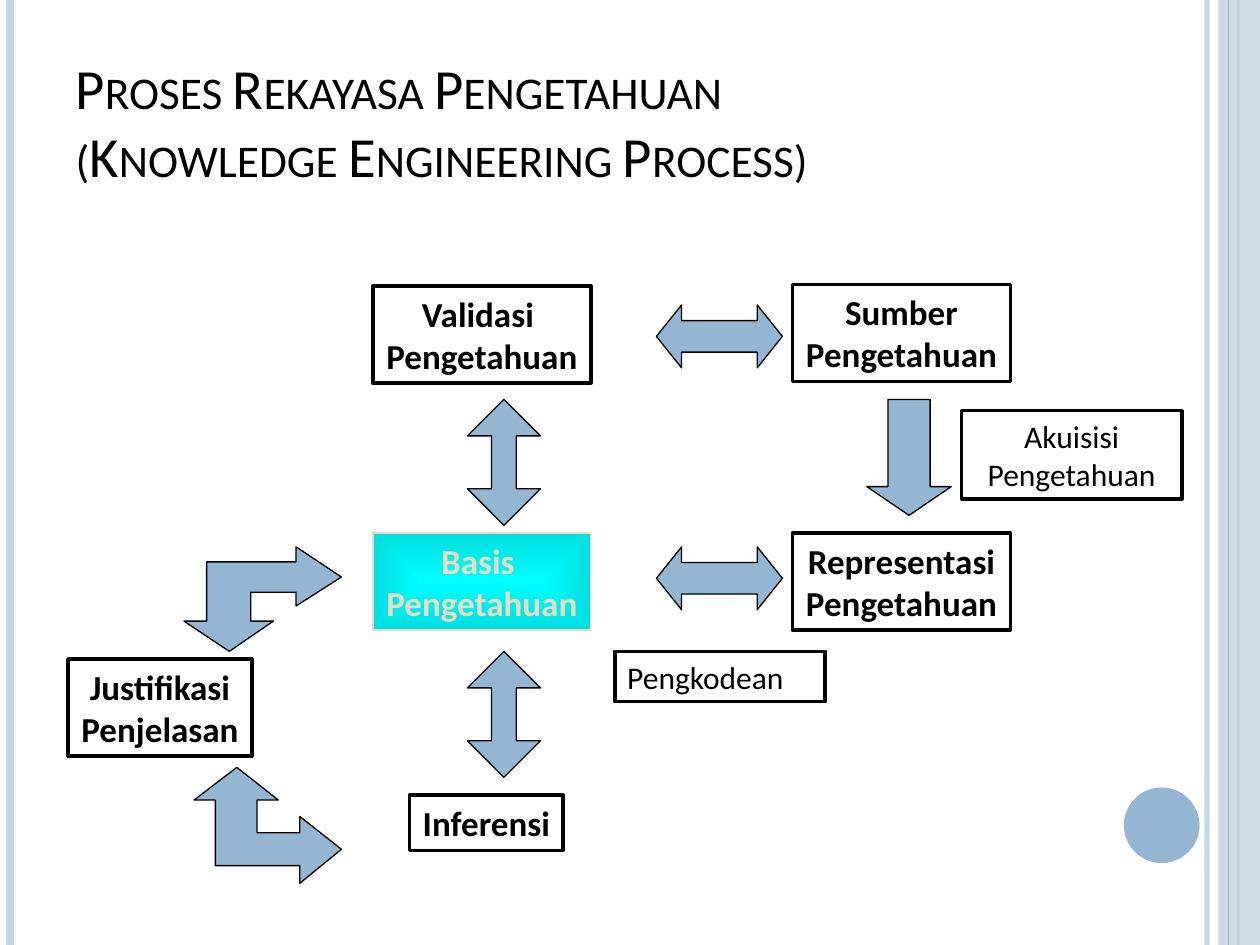
from dataclasses import dataclass

from lxml import etree
from pptx import Presentation
from pptx import util as u
from pptx.dml import color as c
from pptx.enum import shapes, text
from pptx.oxml import ns

Inches = u.Inches
ARROW = shapes.MSO_SHAPE


@dataclass(frozen=True)
class Theme:
    font: str = "Calibri"
    blue: str = "94B6D2"
    pale: str = "C8D7E5"
    white: str = "FFFFFF"
    black: str = "000000"
    sand: str = "EBDDC3"
    cyan: str = "00FFFF"
    teal: str = "00DEDE"
    title_size: float = 32.4
    box_size: float = 20
    label_size: float = 18
    box_line: float = 2
    thin_line: float = 0.75


THEME = Theme()
RULES = [
    (9.58, THEME.pale, 3, 93),
    (0.08, THEME.pale, 4.5, 100),
    (9.83, THEME.blue, 1.5, 100),
    (9.75, THEME.blue, THEME.thin_line, 100),
]
BOXES = [
    ("Validasi \nPengetahuan", 2.96, 2.27, 1.73, 0.77),
    ("Sumber\nPengetahuan", 6.29, 2.26, 1.73, 0.77),
    ("Representasi\nPengetahuan", 6.29, 4.23, 1.73, 0.77),
    ("Justifikasi\nPenjelasan", 0.54, 5.23, 1.46, 0.77),
    ("Inferensi", 3.25, 6.31, 1.22, 0.44),
]
ARROWS = [
    (ARROW.UP_DOWN_ARROW, 3.71, 3.17, 0.58, 1, 0.34),
    (ARROW.UP_DOWN_ARROW, 3.71, 5.17, 0.58, 1, 0.34),
    (ARROW.LEFT_RIGHT_ARROW, 5.21, 2.42, 1, 0.5, 0.4),
    (ARROW.LEFT_RIGHT_ARROW, 5.21, 4.34, 1, 0.5, 0.4),
    (ARROW.DOWN_ARROW, 6.88, 3.17, 0.67, 0.92, 0.34),
]
BENT_ARROWS = [
    [(1.82, 5.17), (2.17, 4.93), (1.99, 4.93), (1.99, 4.7), (2.35, 4.7), (2.35, 4.81),
     (2.71, 4.58), (2.35, 4.34), (2.35, 4.46), (1.64, 4.46), (1.64, 4.93), (1.46, 4.93)],
    [(2.71, 6.74), (2.38, 6.48), (2.38, 6.61), (2.04, 6.61), (2.04, 6.35), (2.21, 6.35),
     (1.88, 6.09), (1.54, 6.35), (1.71, 6.35), (1.71, 6.87), (2.38, 6.87), (2.38, 7.01)],
]


def rgb(value):
    return c.RGBColor.from_string(value)


def set_opacity(element, percent):
    color = element.find(".//" + ns.qn("a:srgbClr"))
    etree.SubElement(color, ns.qn("a:alpha"), val=str(percent * 1000))


def style_shape(shape, fill, line=None, line_width=THEME.thin_line):
    shape.shadow.inherit = False
    shape.fill.solid()
    shape.fill.fore_color.rgb = rgb(fill)
    if line:
        shape.line.color.rgb = rgb(line)
        shape.line.width = u.Pt(line_width)
    else:
        shape.line.fill.background()


def add_shape(slide, kind, left, top, width, height, fill, **line_format):
    shape = slide.shapes.add_shape(
        kind, Inches(left), Inches(top), Inches(width), Inches(height))
    style_shape(shape, fill, **line_format)
    return shape


def write_text(frame, content, size, color=THEME.black, bold=False,
               align=text.PP_ALIGN.LEFT, small_caps=False):
    frame.text = content
    for paragraph in frame.paragraphs:
        paragraph.alignment = align
        for run in paragraph.runs:
            run.font.name = THEME.font
            run.font.size = u.Pt(size)
            run.font.bold = bold
            run.font.color.rgb = rgb(color)
            if small_caps:
                run.font._element.set("cap", "small")


def add_box(slide, content, left, top, width, height, wrap=False,
            line=THEME.black, line_width=THEME.box_line, **text_format):
    box = add_shape(slide, ARROW.RECTANGLE, left, top, width, height, THEME.white,
                    line=line, line_width=line_width)
    frame = box.text_frame
    frame.word_wrap = wrap
    frame.auto_size = text.MSO_AUTO_SIZE.SHAPE_TO_FIT_TEXT
    frame.vertical_anchor = text.MSO_ANCHOR.TOP
    write_text(frame, content, **text_format)
    return box


def fill_from_center(shape, inner, outer):
    shape.fill.gradient()
    for stop, value in zip(shape.fill.gradient_stops, (inner, outer)):
        stop.color.rgb = rgb(value)
    gradient = shape._element.spPr.find(ns.qn("a:gradFill"))
    gradient.remove(gradient.find(ns.qn("a:lin")))
    shading = etree.SubElement(gradient, ns.qn("a:path"), {"path": "shape"})
    etree.SubElement(shading, ns.qn("a:fillToRect"),
                     {side: "50000" for side in "ltrb"})


def add_rule(slide, x, color, width, opacity):
    rule = slide.shapes.add_connector(
        shapes.MSO_CONNECTOR.STRAIGHT, Inches(x), 0, Inches(x), Inches(7.5))
    rule.line.color.rgb = rgb(color)
    rule.line.width = u.Pt(width)
    properties = rule._element.spPr
    if opacity < 100:
        set_opacity(properties, opacity)
    etree.SubElement(properties, ns.qn("a:effectLst"))


def add_bent_arrow(slide, points):
    start, *rest = [(Inches(x), Inches(y)) for x, y in points]
    builder = slide.shapes.build_freeform(*start)
    builder.add_line_segments(rest, close=True)
    style_shape(builder.convert_to_shape(), THEME.blue, line=THEME.black)


def add_decoration(slide):
    for rule in RULES[:3]:
        add_rule(slide, *rule)
    band = add_shape(slide, ARROW.RECTANGLE, 9.67, 0, 0.33, 7.5, THEME.pale)
    set_opacity(band._element.spPr, 87)
    add_rule(slide, *RULES[3])
    add_shape(slide, ARROW.OVAL, 8.92, 6.25, 0.6, 0.6, THEME.blue)


def set_title(slide, content):
    title = slide.shapes.title
    title.left, title.top = Inches(0.5), Inches(0.3)
    title.width, title.height = Inches(8.17), Inches(1.25)
    frame = title.text_frame
    write_text(frame, content, THEME.title_size, small_caps=True)
    frame.vertical_anchor = text.MSO_ANCHOR.BOTTOM
    frame.auto_size = text.MSO_AUTO_SIZE.NONE
    frame.word_wrap = True


def main():
    presentation = Presentation()
    presentation.slide_width, presentation.slide_height = Inches(10), Inches(7.5)
    slide = presentation.slides.add_slide(presentation.slide_layouts[5])
    add_decoration(slide)
    set_title(slide, "Proses Rekayasa Pengetahuan \v(Knowledge Engineering Process)")

    heading = dict(size=THEME.box_size, bold=True, align=text.PP_ALIGN.CENTER)
    for box in BOXES:
        add_box(slide, *box, **heading)
    base = add_box(slide, "Basis \nPengetahuan", 2.96, 4.23, 1.73, 0.77,
                   line=THEME.sand, line_width=THEME.thin_line,
                   color=THEME.sand, **heading)
    fill_from_center(base, THEME.cyan, THEME.teal)

    for kind, left, top, width, height, head in ARROWS:
        arrow = add_shape(slide, kind, left, top, width, height, THEME.blue,
                          line=THEME.black)
        arrow.adjustments[0] = 0.5
        arrow.adjustments[1] = head
    for points in BENT_ARROWS:
        add_bent_arrow(slide, points)

    add_box(slide, "Akuisisi Pengetahuan", 7.63, 3.26, 1.75, 0.7, wrap=True,
            size=THEME.label_size, align=text.PP_ALIGN.CENTER)
    add_box(slide, "Pengkodean", 4.88, 5.17, 1.67, 0.4, wrap=True,
            size=THEME.label_size)
    presentation.save("out.pptx")


if __name__ == "__main__":
    main()
